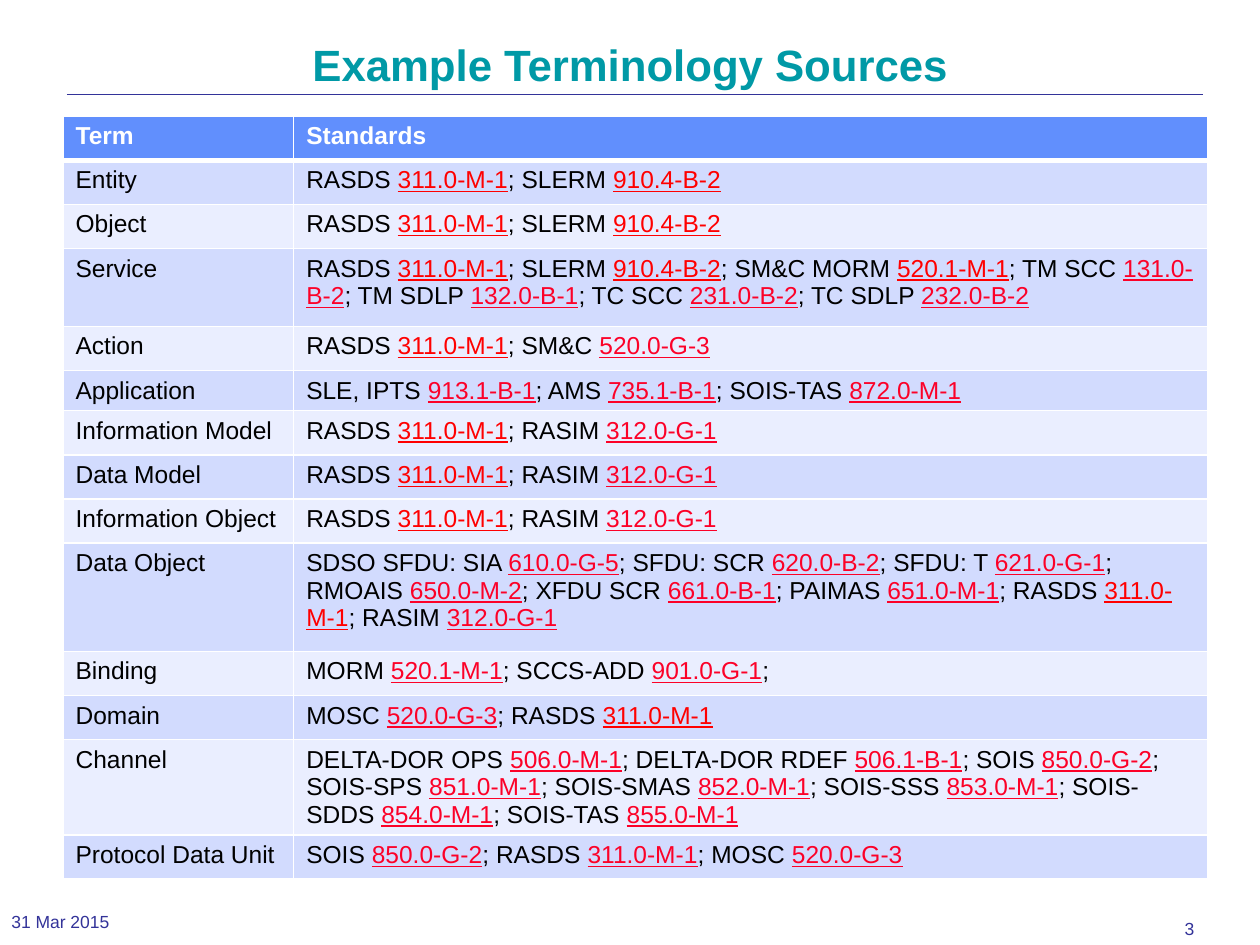
"""Build the slide of example terminology sources."""
from dataclasses import dataclass

from lxml import etree
from pptx import Presentation
from pptx.dml.color import RGBColor
from pptx.enum.shapes import MSO_CONNECTOR
from pptx.enum.text import MSO_ANCHOR, MSO_AUTO_SIZE, PP_ALIGN
from pptx.oxml.ns import qn
from pptx.slide import Slide
from pptx.table import _Cell
from pptx.text.text import TextFrame, _Paragraph
from pptx.util import Cm, Pt

STRAIGHT = MSO_CONNECTOR.STRAIGHT
TOP, MIDDLE = MSO_ANCHOR.TOP, MSO_ANCHOR.MIDDLE
CENTER = PP_ALIGN.CENTER
NO_FIT = MSO_AUTO_SIZE.NONE


@dataclass(frozen=True)
class Theme:
    font: str = "Arial"
    title: str = "0099A6"
    navy: str = "333399"
    white: str = "FFFFFF"
    black: str = "000000"
    head: str = "618FFD"
    bands: tuple[str, str] = ("EAEEFF", "D2DBFE")
    red: str = "FF0000"
    rose: str = "FC0128"
    title_pt: float = 25
    table_pt: float = 14
    note_pt: float = 10


@dataclass(frozen=True)
class Row:
    term: str
    text: str
    high: float = 0.89


@dataclass(frozen=True)
class Note:
    text: str
    left: float
    top: float
    width: float
    height: float


THEME = Theme()
RED_LINKS = {"311.0-M-1", "910.4-B-2", "520.1-M-1"}
WIDTHS = (4.65, 18.42)
ROWS = (
    Row("Term", "Standards"),
    Row("Entity", "RASDS |311.0-M-1|; SLERM |910.4-B-2"),
    Row("Object", "RASDS |311.0-M-1|; SLERM |910.4-B-2"),
    Row("Service", "RASDS |311.0-M-1|; SLERM |910.4-B-2|; SM&C MORM |520.1-M-1"
        "|; TM SCC |131.0-B-2|; TM SDLP |132.0-B-1|; TC SCC |231.0-B-2"
        "|; TC SDLP |232.0-B-2", 1.57),
    Row("Action", "RASDS |311.0-M-1|; SM&C |520.0‑G‑3"),
    Row("Application", "SLE, IPTS |913.1‑B‑1|; AMS |735.1‑B‑1"
        "|; SOIS-TAS |872.0‑M‑1", 0.81),
    Row("Information Model", "RASDS |311.0-M-1|; RASIM |312.0-G-1"),
    Row("Data Model", "RASDS |311.0-M-1|; RASIM |312.0-G-1"),
    Row("Information Object", "RASDS |311.0-M-1|; RASIM |312.0-G-1"),
    Row("Data Object", "SDSO SFDU: SIA |610.0‑G‑5|; SFDU: SCR |620.0‑B‑2"
        "|; SFDU: T |621.0‑G‑1|; RMOAIS |650.0‑M‑2|; XFDU SCR |661.0‑B‑1"
        "|; PAIMAS |651.0‑M‑1|; RASDS |311.0-M-1|; RASIM |312.0-G-1", 2.18),
    Row("Binding", "MORM |520.1‑M‑1|; SCCS-ADD |901.0-G-1|;"),
    Row("Domain", "MOSC |520.0‑G‑3|; RASDS |311.0-M-1"),
    Row("Channel", "DELTA-DOR OPS |506.0‑M‑1|; DELTA-DOR RDEF |506.1‑B‑1"
        "|; SOIS |850.0-G-2|; SOIS-SPS |851.0‑M‑1|; SOIS-SMAS |852.0‑M‑1"
        "|; SOIS-SSS |853.0‑M‑1|; SOIS-SDDS |854.0‑M‑1"
        "|; SOIS-TAS |855.0‑M‑1", 1.91),
    Row("Protocol Data Unit", "SOIS |850.0‑G‑2|; RASDS |311.0‑M‑1"
        "|; MOSC |520.0‑G‑3"),
)
NOTES = (
    Note("31 Mar 2015", 0, 18.21, 4.8, 0.74),
    Note("3", 23.65, 18.39, 0.89, 0.66),
)


def add_run(para: _Paragraph, text: str, size: float, color: str,
            bold: bool = False, under: bool = False) -> None:
    """Add one styled run to a paragraph."""
    run = para.add_run()
    run.text = text
    font = run.font
    font.name, font.size = THEME.font, Pt(size)
    font.bold, font.underline = bold, under
    font.color.rgb = RGBColor.from_string(color)


def add_title(slide: Slide, text: str) -> None:
    """Place and fill the title."""
    shape = slide.shapes.title
    shape.left, shape.top = Cm(1.27), Cm(0.76)
    shape.width, shape.height = Cm(22.86), Cm(3.18)
    frame: TextFrame = shape.text_frame
    frame.vertical_anchor, frame.auto_size = TOP, NO_FIT
    para = frame.paragraphs[0]
    para.alignment, para.line_spacing = CENTER, 0.9
    add_run(para, text, THEME.title_pt, THEME.title, bold=True)


def add_rule(slide: Slide) -> None:
    """Draw the thin line below the title."""
    rule = slide.shapes.add_connector(
        STRAIGHT, Cm(1.35), Cm(1.9), Cm(24.26), Cm(1.9))
    rule.line.color.rgb = RGBColor.from_string(THEME.navy)
    rule.line.width = Pt(0.13)
    etree.SubElement(rule._element.spPr, qn("a:effectLst"))


def add_note(slide: Slide, note: Note) -> None:
    """Add one small text at the foot of the slide."""
    box = slide.shapes.add_textbox(
        Cm(note.left), Cm(note.top), Cm(note.width), Cm(note.height))
    frame = box.text_frame
    frame.word_wrap, frame.vertical_anchor = True, MIDDLE
    frame.margin_left = frame.margin_right = Cm(0.23)
    frame.margin_top = frame.margin_bottom = Cm(0.1)
    add_run(frame.paragraphs[0], note.text, THEME.note_pt, THEME.navy)


def set_edges(cell: _Cell, top: float, base: float) -> None:
    """Give a cell white edges of the given widths."""
    props = cell._tc.get_or_add_tcPr()
    for side, width in (("L", 1), ("R", 1), ("T", top), ("B", base)):
        edge = etree.SubElement(props, qn(f"a:ln{side}"), w=str(Pt(width)))
        fill = etree.SubElement(edge, qn("a:solidFill"))
        etree.SubElement(fill, qn("a:srgbClr"), val=THEME.white)


def fill_cell(cell: _Cell, text: str, index: int) -> None:
    """Style a cell and add its plain and linked runs."""
    head = index == 0
    set_edges(cell, 3 if index == 1 else 1, 3 if head else 1)
    cell.fill.solid()
    cell.fill.fore_color.rgb = RGBColor.from_string(
        THEME.head if head else THEME.bands[index % 2])
    para = cell.text_frame.paragraphs[0]
    for place, part in enumerate(text.split("|")):
        link = place % 2 == 1
        color = THEME.white if head else THEME.black
        if link:
            color = THEME.red if part in RED_LINKS else THEME.rose
        add_run(para, part, THEME.table_pt, color, bold=head, under=link)


def add_terms(slide: Slide) -> None:
    """Add the table of terms and standards."""
    table = slide.shapes.add_table(
        len(ROWS), len(WIDTHS), Cm(1.27), Cm(2.34), Cm(sum(WIDTHS)),
        Cm(sum(row.high for row in ROWS))).table
    for column, width in zip(table.columns, WIDTHS):
        column.width = Cm(width)
    for index, row in enumerate(ROWS):
        table.rows[index].height = Cm(row.high)
        for place, text in enumerate((row.term, row.text)):
            # band order follows the row index
            fill_cell(table.cell(index, place), text, index)


def main() -> None:
    """Build and save the slide."""
    deck = Presentation()
    deck.slide_width, deck.slide_height = Cm(25.4), Cm(19.05)
    slide = deck.slides.add_slide(deck.slide_layouts[5])
    add_rule(slide)
    add_title(slide, "Example Terminology Sources")
    add_terms(slide)
    for note in NOTES:
        add_note(slide, note)
    deck.save("out.pptx")


if __name__ == "__main__":
    main()
